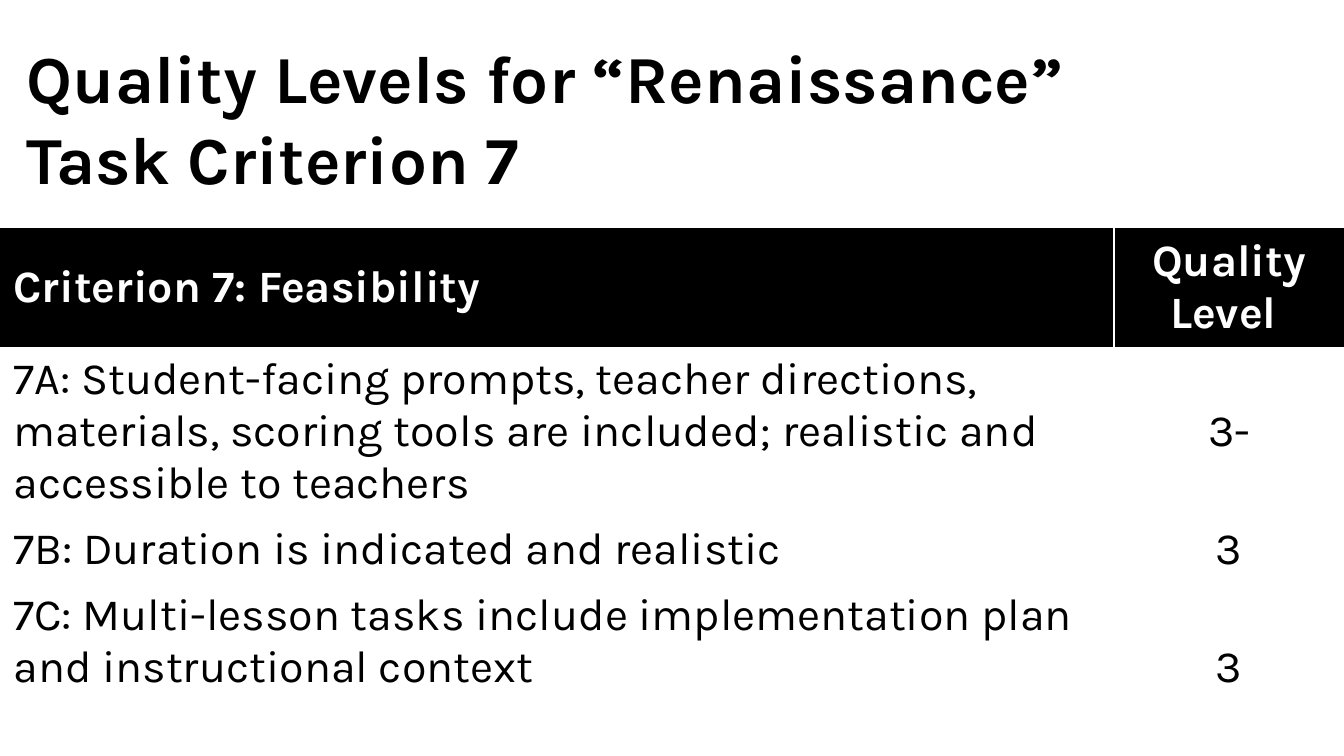
"""Build the slide that rates the "Renaissance" task on criterion 7."""
from dataclasses import dataclass

from lxml import etree
from pptx import Presentation
from pptx.dml.color import RGBColor
from pptx.enum import text
from pptx.oxml import ns
from pptx.util import Inches, Pt


@dataclass(frozen=True)
class Theme:
    font: str = "Karla"
    ink: str = "000000"
    paper: str = "FFFFFF"
    title_size: int = 36
    table_size: int = 24
    rule_width: int = 1
    plain_table: str = "{2D5ABB26-0587-4C30-8999-92F81FD0307C}"


@dataclass(frozen=True)
class Rating:
    criterion: str
    level: str
    height: float
    level_anchor: text.MSO_ANCHOR = text.MSO_ANCHOR.MIDDLE
    heading: bool = False


THEME = Theme()
RATINGS = [
    Rating("Criterion 7: Feasibility", "Quality Level ", 0.88, heading=True),
    Rating("7A: Student-facing prompts, teacher directions, materials, "
           "scoring tools are included; realistic and accessible to teachers",
           "3-", 1.26),
    Rating("7B: Duration is indicated and realistic", "3", 0.49),
    Rating("7C: Multi-lesson tasks include implementation plan and "
           "instructional context", "3", 0.87, text.MSO_ANCHOR.BOTTOM),
]
COLUMN_WIDTHS = (8.29, 1.71)


def write(paragraph, words: str, size: int, color: str, bold: bool,
          align: text.PP_ALIGN) -> None:
    paragraph.alignment = align
    run = paragraph.add_run()
    run.text = words
    run.font.name = THEME.font
    run.font.size = Pt(size)
    run.font.bold = bold
    run.font.color.rgb = RGBColor.from_string(color)


def rule_side(cell, side: str) -> None:
    line = etree.Element(ns.qn(f"a:{side}"), w=str(Pt(THEME.rule_width)))
    fill = etree.SubElement(line, ns.qn("a:solidFill"))
    etree.SubElement(fill, ns.qn("a:srgbClr"), val=THEME.paper)
    cell._tc.get_or_add_tcPr().insert(0, line)


def fill_cell(cell, words: str, rating: Rating, align: text.PP_ALIGN,
              anchor: text.MSO_ANCHOR) -> None:
    cell.margin_left = cell.margin_right = Inches(0.1)
    cell.margin_top = cell.margin_bottom = Inches(0.05)
    cell.vertical_anchor = anchor
    if rating.heading:
        cell.fill.solid()
        cell.fill.fore_color.rgb = RGBColor.from_string(THEME.ink)
    else:
        cell.fill.background()
    color = THEME.paper if rating.heading else THEME.ink
    write(cell.text_frame.paragraphs[0], words, THEME.table_size, color,
          rating.heading, align)


def add_title(slide, words: str) -> None:
    title = slide.shapes.title
    title.left, title.top = Inches(0.1), Inches(0.1)
    title.width, title.height = Inches(9), Inches(1.54)
    frame = title.text_frame
    frame.word_wrap = True
    frame.auto_size = text.MSO_AUTO_SIZE.NONE
    frame.vertical_anchor = text.MSO_ANCHOR.MIDDLE
    write(frame.paragraphs[0], words, THEME.title_size, THEME.ink, True,
          text.PP_ALIGN.LEFT)


def add_ratings(slide, ratings: list[Rating]) -> None:
    height = sum(rating.height for rating in ratings)
    table = slide.shapes.add_table(
        len(ratings), len(COLUMN_WIDTHS), Inches(0), Inches(1.7),
        Inches(sum(COLUMN_WIDTHS)), Inches(height)).table
    table.first_row = table.horz_banding = False
    table._tbl.tblPr.find(ns.qn("a:tableStyleId")).text = THEME.plain_table
    for column, width in zip(table.columns, COLUMN_WIDTHS):
        column.width = Inches(width)
    for row, rating in zip(table.rows, ratings):
        row.height = Inches(rating.height)
        criterion, level = row.cells
        fill_cell(criterion, rating.criterion, rating, text.PP_ALIGN.LEFT,
                  text.MSO_ANCHOR.MIDDLE)
        fill_cell(level, rating.level, rating, text.PP_ALIGN.CENTER,
                  rating.level_anchor)
        if rating.heading:
            rule_side(criterion, "lnR")
            rule_side(level, "lnL")


def main() -> None:
    deck = Presentation()
    deck.slide_width = Inches(10)
    deck.slide_height = deck.slide_width * 9 // 16
    slide = deck.slides.add_slide(deck.slide_layouts.get_by_name("Title Only"))
    add_title(slide, "Quality Levels for “Renaissance” Task Criterion 7")
    add_ratings(slide, RATINGS)
    deck.save("out.pptx")


if __name__ == "__main__":
    main()
